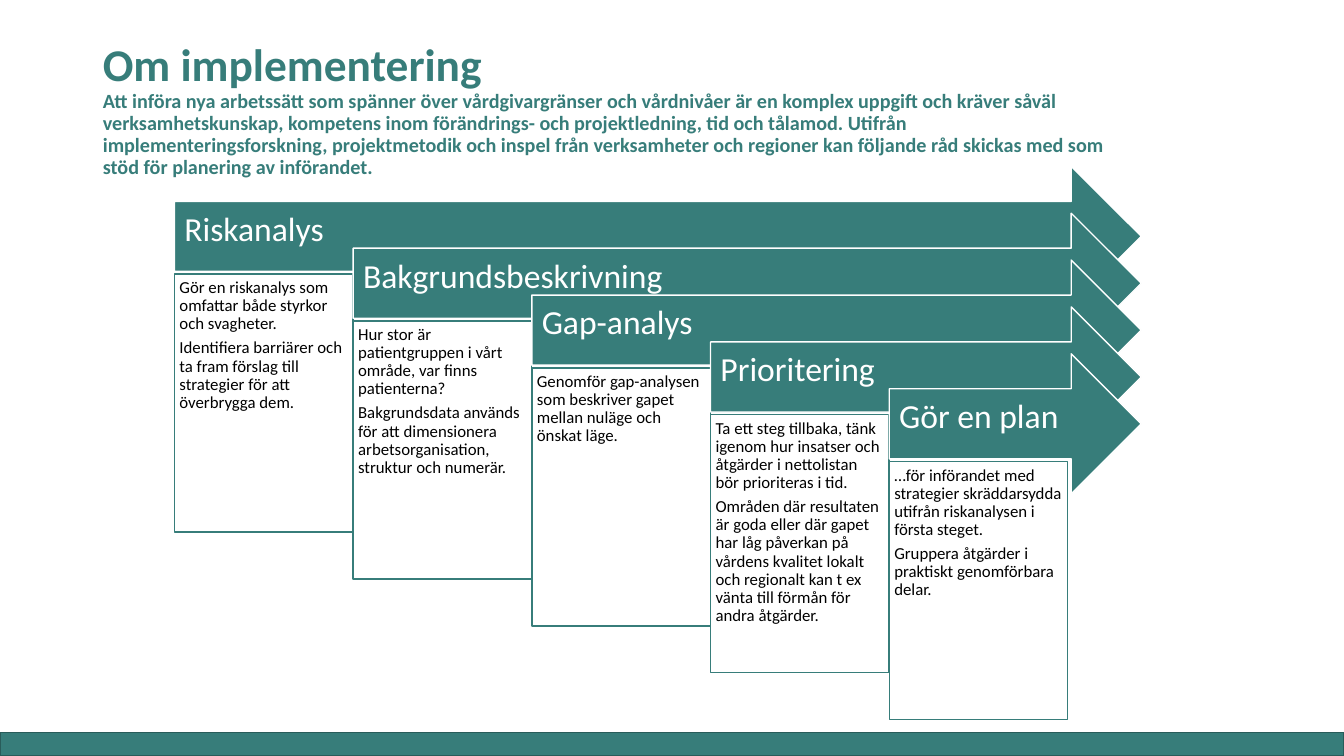
"""Build the slide "Om implementering" with five cascading steps."""
from pptx import Presentation
from pptx.dml.color import RGBColor
from pptx.enum.shapes import MSO_SHAPE
from pptx.enum.text import MSO_ANCHOR, MSO_AUTO_SIZE, PP_ALIGN
from pptx.util import Inches, Pt

RECTANGLE = MSO_SHAPE.RECTANGLE
RIGHT_ARROW = MSO_SHAPE.RIGHT_ARROW
TOP, MIDDLE = MSO_ANCHOR.TOP, MSO_ANCHOR.MIDDLE
LEFT = PP_ALIGN.LEFT
NO_AUTOFIT = MSO_AUTO_SIZE.NONE

COLORS = {"teal": "377D7A", "dark_teal": "295C5A", "white": "FFFFFF", "black": "000000"}
FONT = "Calibri"

STEPS = [
    ("Riskanalys", [
        "Gör en riskanalys som omfattar både styrkor och svagheter.",
        "Identifiera barriärer och ta fram förslag till strategier för att överbrygga dem.",
    ]),
    ("Bakgrundsbeskrivning", [
        "Hur stor är patientgruppen i vårt område, var finns patienterna?",
        "Bakgrundsdata används för att dimensionera arbetsorganisation, struktur och numerär.",
    ]),
    ("Gap-analys", [
        "Genomför gap-analysen som beskriver gapet mellan nuläge och önskat läge.",
    ]),
    ("Prioritering", [
        "Ta ett steg tillbaka, tänk igenom hur insatser och åtgärder i nettolistan "
        "bör prioriteras i tid.",
        "Områden där resultaten är goda eller där gapet har låg påverkan på vårdens kvalitet "
        "lokalt och regionalt kan t ex vänta till förmån för andra åtgärder.",
    ]),
    ("Gör en plan", [
        "…för införandet med strategier skräddarsydda utifrån riskanalysen i första steget.",
        "Gruppera åtgärder i praktiskt genomförbara delar.",
    ]),
]
INTRO = (
    "Att införa nya arbetssätt som spänner över vårdgivargränser och vårdnivåer är en komplex "
    "uppgift och kräver såväl verksamhetskunskap, kompetens inom förändrings- och "
    "projektledning, tid och tålamod. Utifrån implementeringsforskning, projektmetodik och "
    "inspel från verksamheter och regioner kan följande råd skickas med som stöd för planering "
    "av införandet."
)


def write_text(shape, paragraphs, size, color="black", bold=False, anchor=TOP,
               insets=(0.05, 0.05, 0.05, 0.05), space_after=0):
    """Fill a shape with paragraphs in one format."""
    frame = shape.text_frame
    frame.word_wrap = True
    frame.auto_size = NO_AUTOFIT
    frame.vertical_anchor = anchor
    frame.margin_left, frame.margin_top, frame.margin_right, frame.margin_bottom = map(
        Inches, insets)
    for index, text in enumerate(paragraphs):
        paragraph = frame.add_paragraph() if index else frame.paragraphs[0]
        paragraph.text = text
        paragraph.alignment = LEFT
        paragraph.line_spacing = 0.9
        paragraph.space_before = Pt(0)
        paragraph.space_after = Pt(space_after)
        for run in paragraph.runs:
            run.font.name = FONT
            run.font.size = Pt(size)
            run.font.bold = bold
            run.font.color.rgb = RGBColor.from_string(COLORS[color])


def add_block(slide, kind, box, fill, line):
    """Add a filled and outlined preset shape."""
    shape = slide.shapes.add_shape(kind, *map(Inches, box))
    shape.shadow.inherit = False
    shape.fill.solid()
    shape.fill.fore_color.rgb = RGBColor.from_string(COLORS[fill])
    shape.line.color.rgb = RGBColor.from_string(COLORS[line])
    shape.line.width = Pt(1)
    return shape


presentation = Presentation()
presentation.slide_width = Inches(13.33)
presentation.slide_height = Inches(7.5)
slide = presentation.slides.add_slide(presentation.slide_layouts[5])

add_block(slide, RECTANGLE, (0, 7.27, 13.33, 0.23), "teal", "dark_teal")

title = slide.shapes.title
title.left, title.top, title.width, title.height = map(Inches, (0.92, 0.64, 10.29, 1.45))
write_text(title, ["Om implementering\v" + INTRO], size=14.4, color="teal", bold=True,
           anchor=MIDDLE, insets=(0.1, 0.05, 0.1, 0.59))
title.text_frame.paragraphs[0].runs[0].font.size = Pt(32.4)

ARROW_RIGHT = 11.32
BOX_WIDTH = 1.77
STEP_RIGHT = (8.82 - 1.73) / (len(STEPS) - 1)
STEP_DOWN = (3.51 - 1.65) / (len(STEPS) - 1)
for index, (heading, details) in enumerate(STEPS):
    left = 1.73 + STEP_RIGHT * index
    top = 1.65 + STEP_DOWN * index
    arrow = add_block(slide, RIGHT_ARROW, (left, top, ARROW_RIGHT - left, 1.39), "teal", "white")
    write_text(arrow, [heading], size=24, color="white", anchor=MIDDLE,
               insets=(0.1, 0.1, 0.28, 0.22))
    detail_box = add_block(slide, RECTANGLE, (left, top + 1.07, BOX_WIDTH, 2.56), "white", "teal")
    write_text(detail_box, details, size=12, space_after=4.2)

presentation.save("out.pptx")
